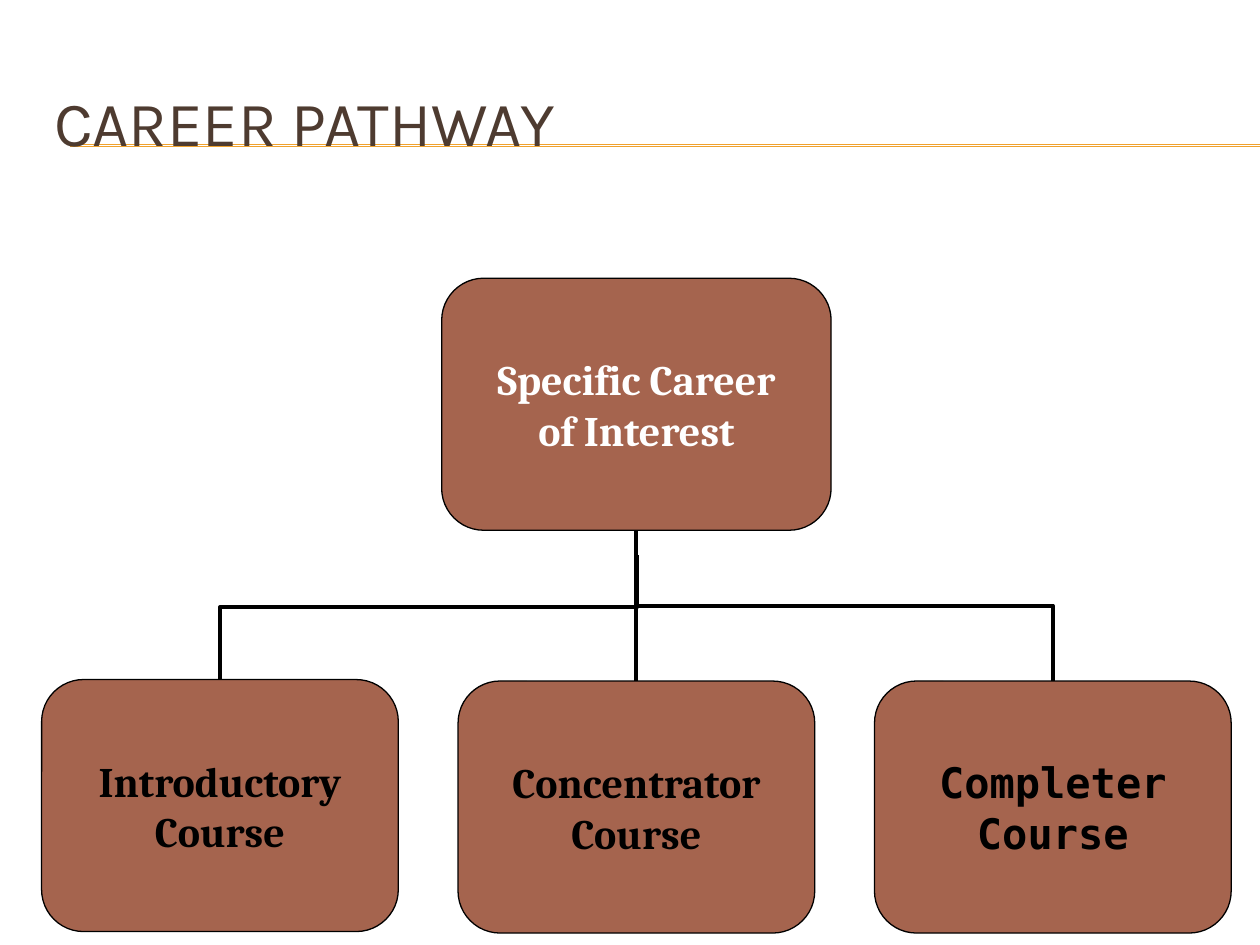
from dataclasses import dataclass

from lxml.etree import SubElement
from pptx import Presentation
from pptx.dml.color import RGBColor
from pptx.enum.shapes import MSO_CONNECTOR, MSO_SHAPE
from pptx.enum.text import MSO_ANCHOR, PP_ALIGN
from pptx.oxml.ns import qn
from pptx.util import Cm, Pt


@dataclass(frozen=True)
class Theme:
    """Colours, fonts and sizes of the slide."""
    title: RGBColor = RGBColor(0x4E, 0x3B, 0x30)
    rule: RGBColor = RGBColor(0xF0, 0xA2, 0x2E)
    box: RGBColor = RGBColor(0xA5, 0x64, 0x4E)
    dark: RGBColor = RGBColor(0, 0, 0)
    light: RGBColor = RGBColor(255, 255, 255)
    title_font: str = "Karla"
    box_font: str = "Cambria"
    mono_font: str = "DejaVu Sans Mono"
    title_size: Pt = Pt(36)
    box_size: Pt = Pt(24)
    thin: Pt = Pt(0.75)
    thick: Pt = Pt(2.25)


THEME = Theme()


def set_all(obj, **values):
    """Set each named attribute of an object."""
    for name, value in values.items():
        setattr(obj, name, value)


def write(p, text, color, **font):
    """Add one formatted run to a paragraph."""
    r = p.add_run()
    r.text = text
    set_all(r.font, **font)
    r.font.color.rgb = color


def add_line(s, kind, x1, y1, x2, y2, color, width):
    """Add a connector without a shadow, in centimetres."""
    line = s.shapes.add_connector(kind, Cm(x1), Cm(y1), Cm(x2), Cm(y2))
    line.line.color.rgb = color
    line.line.width = width
    SubElement(line._element.spPr, qn("a:effectLst"))
    return line


def add_title(s, left, top, width, height, text):
    """Place the heading over its double rule."""
    for offset in (1.65, 1.68):
        add_line(s, MSO_CONNECTOR.STRAIGHT, left + 0.58, top + offset, 25.4, top + offset,
                 THEME.rule, THEME.thin)
    sp = s.shapes.add_textbox(Cm(left), Cm(top), Cm(width), Cm(height))
    tf = sp.text_frame
    set_all(tf, word_wrap=True, vertical_anchor=MSO_ANCHOR.MIDDLE)
    write(tf.paragraphs[0], text, THEME.title, name=THEME.title_font, size=THEME.title_size)


def add_box(s, left, top, width, height, lines, color, font):
    """Place a rounded box with centred bold lines."""
    sp = s.shapes.add_shape(MSO_SHAPE.ROUNDED_RECTANGLE, Cm(left), Cm(top), Cm(width), Cm(height))
    sp.shadow.inherit = False
    sp.fill.solid()
    sp.fill.fore_color.rgb = THEME.box
    sp.line.color.rgb = THEME.dark
    sp.line.width = THEME.thin
    tf = sp.text_frame
    set_all(tf, word_wrap=False, vertical_anchor=MSO_ANCHOR.MIDDLE,
            margin_left=0, margin_right=0, margin_top=0, margin_bottom=0)
    for i, text in enumerate(lines):
        p = tf.add_paragraph() if i else tf.paragraphs[0]
        p.alignment = PP_ALIGN.CENTER
        write(p, text, color, name=font, size=THEME.box_size, bold=True)


def add_elbow(s, x1, y1, x2, y2, bend):
    """Join a lower point to a higher one, leaving upwards and turning at the bend."""
    mx, my, rise, run = (x1 + x2) / 2, (y1 + y2) / 2, y1 - y2, x2 - x1
    line = add_line(s, MSO_CONNECTOR.ELBOW, mx - rise / 2, my - run / 2,
                    mx + rise / 2, my + run / 2, THEME.dark, THEME.thick)
    sp_pr = line._element.spPr
    sp_pr.find(qn("a:xfrm")).set("rot", str(270 * 60000))
    geom = sp_pr.find(qn("a:prstGeom"))
    guides = geom.find(qn("a:avLst"))
    if guides is None:
        guides = SubElement(geom, qn("a:avLst"))
    SubElement(guides, qn("a:gd"), name="adj1", fmla=f"val {round(bend * 100000)}")


def add_pathway(s, left, top, width, height):
    """Place the career box above its three courses and join them."""
    box_w, box_h, career_w = 7.19, 5.08, 7.85
    step = (width - box_w) / 2
    career_x = left + (width - career_w) / 2
    course_y = top + height - box_h
    career_bottom = top + box_h
    center = left + width / 2
    add_box(s, career_x, top, career_w, box_h, ("Specific Career", "of Interest"),
            THEME.light, THEME.box_font)
    courses = (
        ("Introductory", THEME.box_font, -0.03, 0.02, 0.49, 0.58),
        ("Concentrator", THEME.box_font, 0, 0, 0, 0.5),
        ("Completer", THEME.mono_font, 0, 0, 0, 0.5),
    )
    for i, (name, font, lift, shift, drop, bend) in enumerate(courses):
        x, y = left + i * step, course_y + lift
        add_elbow(s, x + box_w / 2, y, center + shift, career_bottom + drop, bend)
        add_box(s, x, y, box_w, box_h, (name, "Course"), THEME.dark, font)


def main():
    """Build and save the slide."""
    prs = Presentation()
    set_all(prs, slide_width=Cm(25.4), slide_height=Cm(19.05))
    s = prs.slides.add_slide(prs.slide_layouts[6])
    add_title(s, 0.84, 1.27, 24.13, 2.34, "CAREER PATHWAY")
    add_pathway(s, 0.84, 5.61, 23.98, 13.2)
    prs.save("out.pptx")


if __name__ == "__main__":
    main()
